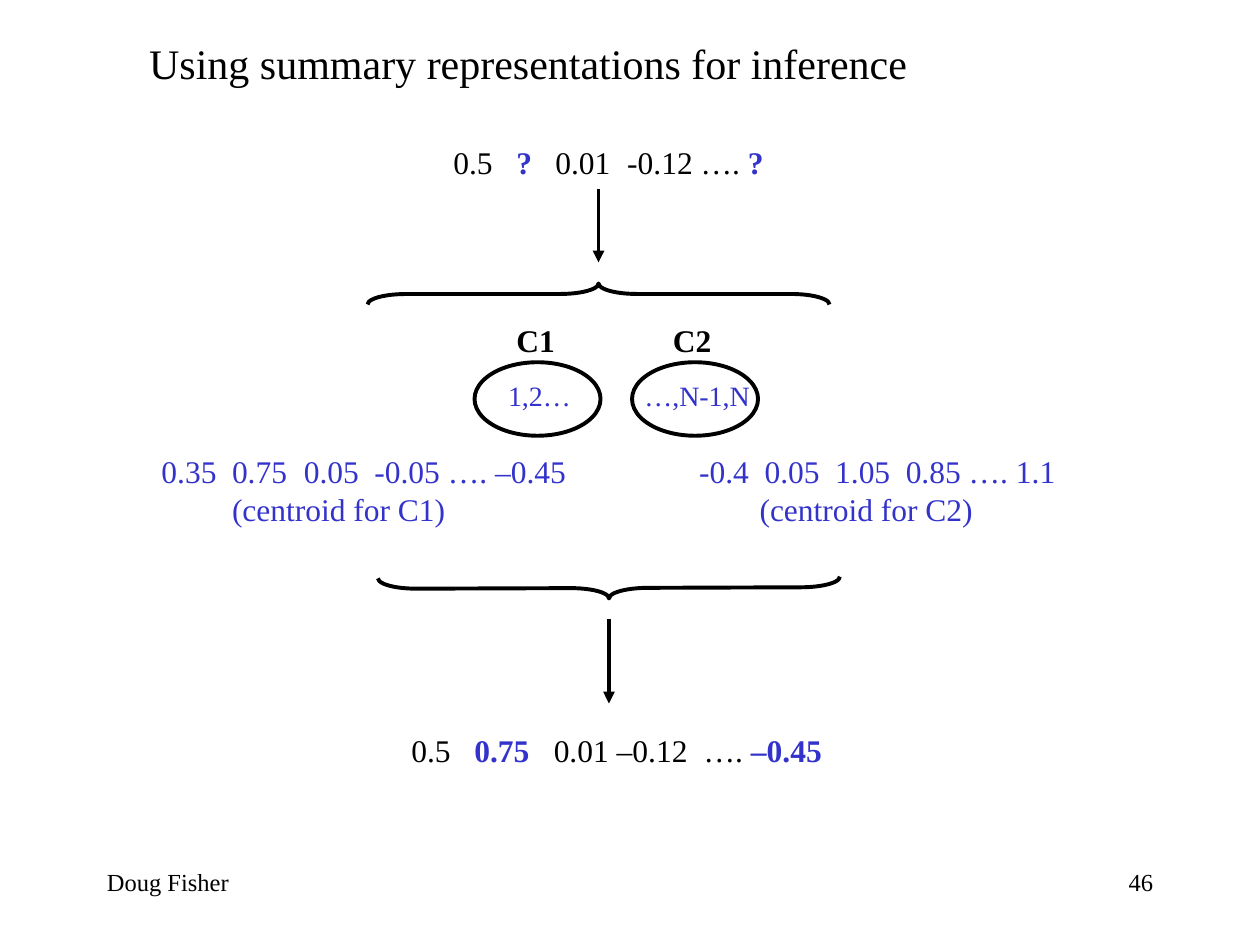
import pptx
import pptx.util
import pptx.dml.color
import pptx.enum.shapes
import pptx.enum.text
import pptx.oxml.ns
import lxml.etree

BLACK = pptx.dml.color.RGBColor(0x00, 0x00, 0x00)
BLUE = pptx.dml.color.RGBColor(0x33, 0x33, 0xCC)
FONT = "Times New Roman"
SHAPE = pptx.enum.shapes.MSO_SHAPE
ALIGN = pptx.enum.text.PP_ALIGN


def inch(size):
    return pptx.util.Inches(size)


def sub(node, tag, **attrs):
    return lxml.etree.SubElement(node, pptx.oxml.ns.qn(tag), **attrs)


class Deck:
    """Style and current slide; lengths are cells of a 120 by 90 grid."""

    def __init__(self):
        self.prs = pptx.Presentation()
        self.prs.slide_width = inch(10)
        self.prs.slide_height = inch(7.5)
        self.cell = self.prs.slide_width / 120
        self.slide = self.prs.slides.add_slide(self.prs.slide_layouts[5])

    def grid(self, *cells):
        return [round(c * self.cell) for c in cells]

    def fill(self, para, runs, size, color=BLACK, bold=False, align=ALIGN.LEFT):
        """Runs between bars; every second one is a bold blue highlight."""
        para.alignment = align
        para.font.name = FONT
        para.font.size = pptx.util.Pt(size)
        para.font.bold = bold
        para.font.color.rgb = color
        for i, words in enumerate(runs.split("|")):
            if words:
                run = para.add_run()
                run.text = words
                if i % 2:
                    run.font.bold = True
                    run.font.color.rgb = BLUE

    def title(self, words, x, y, w, h):
        box = self.slide.shapes.title
        box.left, box.top, box.width, box.height = self.grid(x, y, w, h)
        frame = box.text_frame
        frame.auto_size = pptx.enum.text.MSO_AUTO_SIZE.NONE
        frame.vertical_anchor = pptx.enum.text.MSO_ANCHOR.TOP
        self.fill(frame.paragraphs[0], words, 24)

    def text(self, words, x, y, w, h=4.8, size=18, **style):
        box = self.slide.shapes.add_textbox(*self.grid(x, y, w, h))
        box.text_frame.word_wrap = True
        self.fill(box.text_frame.paragraphs[0], words, size, **style)
        return box.text_frame

    def vector(self, words, x, y, w, stops, h=4.8, **style):
        """A row of values set on tab stops, given in inches."""
        frame = self.text(words, x, y, w, h, **style)
        props = frame.paragraphs[0]._p.get_or_add_pPr()
        tabs = lxml.etree.Element(pptx.oxml.ns.qn("a:tabLst"))
        for stop in stops:
            sub(tabs, "a:tab", pos=str(inch(stop)), algn="l")
        props.insert_element_before(tabs, "a:defRPr", "a:extLst")
        return frame

    def centroid(self, words, note, x, w, stops, indent):
        frame = self.vector(words, x, 42.5, w, stops, h=8.4, color=BLUE)
        para = frame.add_paragraph()
        self.fill(para, note, 18, color=BLUE)
        para._p.get_or_add_pPr().set("marL", str(inch(indent)))

    def outline(self, kind, x, y, w, h):
        shape = self.slide.shapes.add_shape(kind, *self.grid(x, y, w, h))
        shape.shadow.inherit = False
        shape.fill.background()
        shape.line.color.rgb = BLACK
        shape.line.width = pptx.util.Pt(2.25)
        return shape

    def brace(self, x, y, turn):
        shape = self.outline(SHAPE.LEFT_BRACE, x, y, 2, 44)
        shape.adjustments[0] = 1.83
        shape.rotation = turn

    def arrow(self, x, top, end):
        line = self.slide.shapes.add_connector(
            pptx.enum.shapes.MSO_CONNECTOR.STRAIGHT, *self.grid(x, top, x, end))
        line.line.color.rgb = BLACK
        line.line.width = pptx.util.Pt(2.25)
        sub(line.line._get_or_add_ln(), "a:tailEnd", type="triangle")
        sub(line._element.spPr, "a:effectLst")


def main():
    deck = Deck()

    # Title and footer
    deck.title("Using summary representations for inference", 13, 3, 78, 6)
    deck.text("Doug Fisher", 9, 82, 25, 6, size=14)
    deck.text("46", 86, 82, 25, 6, size=14, align=ALIGN.RIGHT)

    # Query with unknown values
    deck.vector("0.5\t|?|\t0.01\t-0.12 …. |?", 42, 13, 36, (0.5, 0.81, 1.38))
    deck.arrow(57, 18, 25)
    deck.brace(56, 6, 90)

    # Clusters
    for name, left in (("C1", 48), ("C2", 62.9)):
        deck.text(name, left, 30, 8, bold=True)
    for left in (45.2, 60.2):
        deck.outline(SHAPE.OVAL, left, 34.5, 12, 7)
    for items, left in (("1,2…", 47.2), ("…,N-1,N", 60.2)):
        deck.text(items, left, 35.5, 14, 4.4, size=16, color=BLUE)

    # Centroids
    deck.centroid("0.35\t0.75\t0.05\t-0.05 …. –0.45", "(centroid for C1)",
                  14.2, 43, (0.56, 1.13, 1.69), 0.56)
    deck.centroid("-0.4\t0.05\t1.05\t0.85 …. 1.1", "(centroid for C2)",
                  65.4, 38, (0.52, 1.08, 1.64), 0.48)

    # Completed values
    deck.brace(57, 34, 269.8)
    deck.arrow(58, 59, 67)
    deck.vector("0.5\t|0.75|\t0.01 –0.12\t…. |–0.45", 38, 69, 46,
                (0.5, 1.13, 2.32))

    deck.prs.save("out.pptx")


if __name__ == "__main__":
    main()
